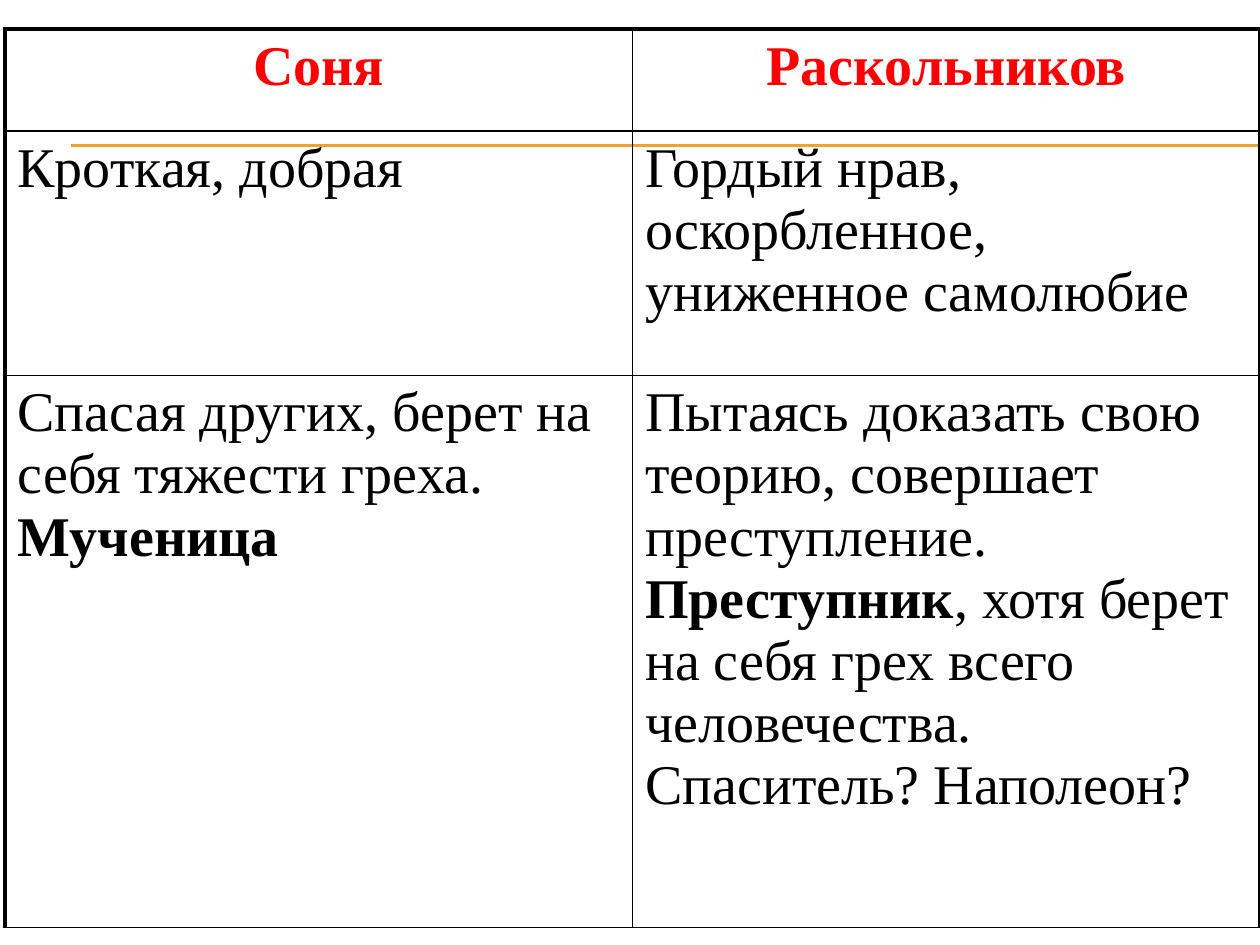
from lxml import etree
from pptx import Presentation
from pptx import util as u
from pptx.dml.color import RGBColor
from pptx.enum import shapes, text
from pptx.oxml.ns import qn

BLACK, RED, ORANGE = "000000", "FF0000", "F0A22E"
THIN, THICK = 1, 2.25


def color(value):
    return RGBColor.from_string(value)


def add_run(paragraph, content, *, font="Times New Roman", size=32, fill=BLACK, bold=False):
    run = paragraph.add_run()
    run.text = content
    run.font.name = font
    run.font.size = u.Pt(size)
    run.font.bold = bold
    run.font.color.rgb = color(fill)


def set_border(cell, side, width):
    line = etree.SubElement(cell._tc.get_or_add_tcPr(), qn(f"a:ln{side}"),
                            w=str(u.Pt(width)))
    solid = etree.SubElement(line, qn("a:solidFill"))
    etree.SubElement(solid, qn("a:srgbClr"), val=BLACK)


class ComparisonSlide:
    def __init__(self, presentation):
        self.slide = presentation.slides.add_slide(presentation.slide_layouts[6])

    def rule(self, left, right, top):
        line = self.slide.shapes.add_connector(
            shapes.MSO_CONNECTOR.STRAIGHT,
            u.Inches(left), u.Inches(top), u.Inches(right), u.Inches(top))
        line.line.color.rgb = color(ORANGE)
        line.line.width = u.Pt(0.75)
        etree.SubElement(line._element.spPr, qn("a:effectLst"))

    def table(self, left, top, widths, heights, rows):
        table = self.slide.shapes.add_table(
            len(heights), len(widths), u.Inches(left), u.Inches(top),
            u.Inches(sum(widths)), u.Inches(sum(heights))).table
        table.first_row = table.horz_banding = False
        for column, width in zip(table.columns, widths):
            column.width = u.Inches(width)
        for row, height in zip(table.rows, heights):
            row.height = u.Inches(height)
        for i, row in enumerate(rows):
            for j, runs in enumerate(row):
                self.cell(table.cell(i, j), runs, header=i == 0,
                          first=j == 0, last=j == len(widths) - 1)

    def cell(self, cell, runs, *, header, first, last):
        # Thick frame on the left, top and right; thin lines elsewhere
        for side, thick in (("L", first), ("R", last), ("T", header), ("B", False)):
            set_border(cell, side, THICK if thick else THIN)
        cell.fill.background()
        paragraph = cell.text_frame.paragraphs[0]
        paragraph.alignment = text.PP_ALIGN.CENTER if header else text.PP_ALIGN.LEFT
        for content, bold in runs:
            add_run(paragraph, content, bold=bold, fill=RED if header else BLACK)


def main():
    presentation = Presentation()
    presentation.slide_width = u.Inches(10)
    presentation.slide_height = u.Inches(7.5)
    slide = ComparisonSlide(presentation)

    # Double rule behind the table
    for top in (1.15, 1.16):
        slide.rule(0.56, 10, top)

    # Comparison of the two characters: each cell is a list of (text, bold)
    rows = [
        [[("Соня", True)], [("Раскольников", True)]],
        [[("Кроткая, добрая", False)],
         [("Гордый нрав, оскорбленное, униженное самолюбие", False)]],
        [[("Спасая других, берет на себя тяжести греха. ", False), ("Мученица", True)],
         [("Пытаясь доказать свою теорию, совершает преступление. ", False),
          ("Преступник", True),
          (", хотя берет на себя грех всего человечества. "
           "Спаситель? Наполеон?", False)]],
    ]
    slide.table(0.04, 0.23, [4.98, 4.98], [0.81, 1.94, 4.38], rows)

    presentation.save("out.pptx")


if __name__ == "__main__":
    main()
